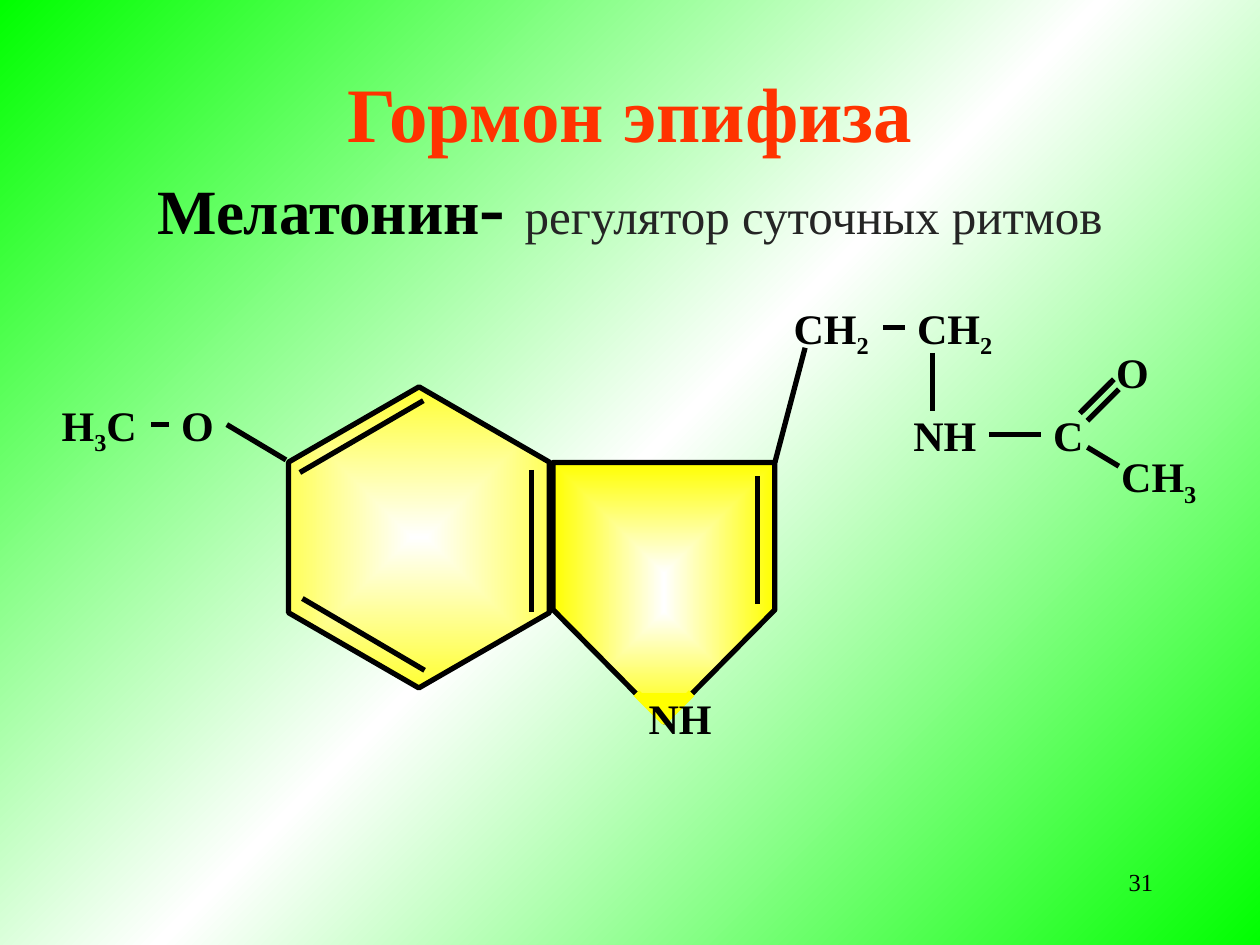
from itertools import groupby

from lxml.etree import SubElement
from pptx import Presentation
from pptx.dml.color import RGBColor
from pptx.enum.shapes import MSO_CONNECTOR, MSO_SHAPE
from pptx.enum.text import MSO_ANCHOR, MSO_AUTO_SIZE, PP_ALIGN
from pptx.oxml.ns import qn
from pptx.util import Inches, Pt

THEME = {
    "font": "Times New Roman",
    "black": "000000", "red": "FF3300", "grey": "252525",
    "green": "00FF00", "white": "FFFFFF", "yellow": "FFFF00",
    "heading": 44, "name": 36, "role": 28, "atom": 24, "number": 14,
    "bond": 3, "patch": 4.5,
}


def write(para, text, size="atom", color="black", bold=True, baseline=0):
    span = para.add_run()
    span.text = text
    span.font.name = THEME["font"]
    span.font.size = Pt(THEME[size])
    span.font.bold = bold
    span.font.color.rgb = RGBColor.from_string(THEME[color])
    if baseline:
        span.font._element.set("baseline", str(baseline * 1000))


def set_gradient(fill, element, colors, path=None):
    """Spread colors evenly, from the centre if a path is given, else diagonally."""
    fill.gradient()
    gradient = element.find(".//" + qn("a:gradFill"))
    for child in list(gradient):
        gradient.remove(child)
    stops = SubElement(gradient, qn("a:gsLst"))
    for index, color in enumerate(colors):
        position = 100000 * index // (len(colors) - 1)
        stop = SubElement(stops, qn("a:gs"), pos=str(position))
        SubElement(stop, qn("a:srgbClr"), val=THEME[color])
    if path:
        centre = SubElement(gradient, qn("a:path"), path=path)
        SubElement(centre, qn("a:fillToRect"), dict.fromkeys("ltrb", "50000"))
    else:
        SubElement(gradient, qn("a:lin"), ang="2700000", scaled="0")


deck = Presentation()
deck.slide_width, deck.slide_height = Inches(10), Inches(7.5)
page = deck.slides.add_slide(deck.slide_layouts[5])

# Grid of 100 columns by 75 rows with square cells
CELL = deck.slide_width // 100

# Background
set_gradient(page.background.fill, page._element, ["green", "white", "green"])

# Slide number
box = page.shapes.add_textbox(71.7 * CELL, 68.3 * CELL, 20.8 * CELL, 5 * CELL)
box.text_frame.word_wrap = True
para = box.text_frame.paragraphs[0]
para.alignment = PP_ALIGN.RIGHT
write(para, "31", size="number", bold=False)

# Title
title = page.shapes.title
title.left, title.top, title.width, title.height = (
    int(share * CELL) for share in (5.9, 3.6, 88.2, 17.8))
title.text_frame.auto_size = MSO_AUTO_SIZE.NONE
title.text_frame.vertical_anchor = MSO_ANCHOR.MIDDLE
para = title.text_frame.paragraphs[0]
para.alignment = PP_ALIGN.CENTER
write(para, "Гормон эпифиза", size="heading", color="red")
para.add_line_break()
write(para, "Мелатонин", size="name")
write(para, "- ", size="heading")
write(para, "регулятор суточных ритмов", size="role", color="grey", bold=False)

# Five-membered ring, and the patch that opens its tip for the NH group
LEFT, RIGHT, TOP, SHOULDER, TIP = 43.9, 61.5, 36.7, 48.4, 57.3
MIDDLE = (LEFT + RIGHT) / 2
ring_points = [(MIDDLE, TIP), (RIGHT, SHOULDER), (RIGHT, TOP),
               (LEFT, TOP), (LEFT, SHOULDER)]
patch_points = [(MIDDLE - 2.2, 55), (MIDDLE, 57.2), (MIDDLE + 2.2, 55)]
outlines = []
for points, closed in [(ring_points, True), (patch_points, False)]:
    corners = [(column * CELL, row * CELL) for column, row in points]
    builder = page.shapes.build_freeform(*corners[0])
    builder.add_line_segments(corners[1:], close=closed)
    outlines.append(builder.convert_to_shape())
pentagon, patch = outlines
set_gradient(pentagon.fill, pentagon._element, ["white", "yellow"], path="rect")
patch.fill.solid()
patch.fill.fore_color.rgb = RGBColor.from_string(THEME["yellow"])

# Six-membered ring
hexagon = page.shapes.add_shape(
    MSO_SHAPE.HEXAGON, 21.3 * CELL, 32.3 * CELL, 23.9 * CELL, 20.7 * CELL)
hexagon.adjustments[0] = 0.289
hexagon.adjustments[1] = 1.155
hexagon.rotation = 30
set_gradient(hexagon.fill, hexagon._element, ["white", "yellow"], path="shape")

for shape, color, width in [(pentagon, "black", "bond"),
                            (hexagon, "black", "bond"),
                            (patch, "yellow", "patch")]:
    shape.shadow.inherit = False
    shape.line.color.rgb = RGBColor.from_string(THEME[color])
    shape.line.width = Pt(THEME[width])

# Bonds: start column and row, end column and row
bonds = [
    # Double bonds inside the rings
    (60.1, 47.9, 60.1, 37.8), (42.2, 37.3, 42.2, 48.6),
    (23.8, 37.5, 33.6, 31.8), (24, 47.5, 33.7, 53.2),
    # Methoxy group
    (12, 33.7, 13.4, 33.7), (18, 33.7, 22.7, 36.5),
    # Ethyl chain down to the nitrogen
    (RIGHT, TOP, 63.9, 27.6), (70.1, 26, 71.8, 26), (74, 28, 74, 32.6),
    # Acetyl group
    (78.5, 34.5, 82.6, 34.5), (86.3, 35.5, 88.8, 37),
    (85.9, 32.6, 88.4, 30.1), (85.7, 32.8, 88.2, 30.3),
    (86.3, 33.4, 88.8, 30.9),
]
for bond in bonds:
    line = page.shapes.add_connector(
        MSO_CONNECTOR.STRAIGHT, *(int(share * CELL) for share in bond))
    line.line.color.rgb = RGBColor.from_string(THEME["black"])
    line.line.width = Pt(THEME["bond"])
    SubElement(line._element.spPr, qn("a:effectLst"))

# The patch covers the ring's tip
page.shapes._spTree.append(patch._element)

# Atom labels: column, row, width, formula; digits become subscripts
labels = [
    (3.9, 31.2, 8.1, "H3C"), (13.4, 31.2, 4.6, "O"),
    (62, 23.5, 8.1, "CH2"), (71.8, 23.5, 8.1, "CH2"),
    (71.5, 32, 7, "NH"), (82.6, 32, 4.4, "C"),
    (87.6, 27, 4.6, "O"), (88, 35.3, 8.1, "CH3"),
    (50.5, 54.5, 7, "NH"),
]
for column, row, width, formula in labels:
    box = page.shapes.add_textbox(
        column * CELL, row * CELL, width * CELL, 5 * CELL)
    box.text_frame.word_wrap = False
    box.text_frame.auto_size = MSO_AUTO_SIZE.SHAPE_TO_FIT_TEXT
    for is_index, letters in groupby(formula, str.isdigit):
        write(box.text_frame.paragraphs[0], "".join(letters),
              baseline=-25 if is_index else 0)

deck.save("out.pptx")
